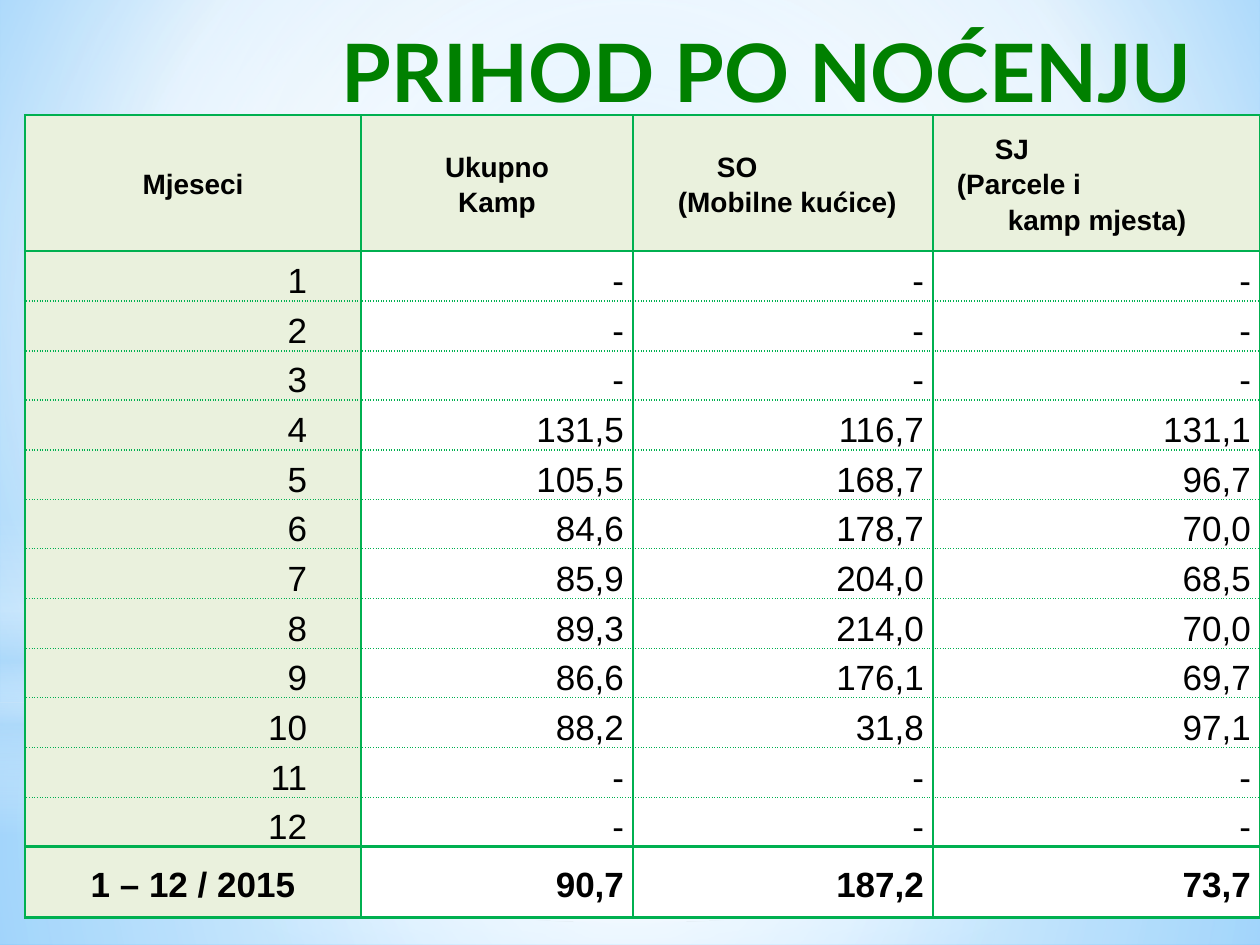
from dataclasses import dataclass

from lxml.etree import SubElement
from pptx import Presentation
from pptx.dml.color import RGBColor
from pptx.enum.shapes import MSO_SHAPE
from pptx.enum.text import MSO_ANCHOR, PP_ALIGN
from pptx.oxml.ns import qn
from pptx.util import Pt

PX = 914400 // 126
SLIDE_WIDTH, SLIDE_HEIGHT = 1260, 945


@dataclass(frozen=True)
class Theme:
    title_font: str = "Lato"
    table_font: str = "Arial"
    title_size: int = 46
    header_size: int = 16
    body_size: int = 20
    title: str = "008000"
    text: str = "000000"
    border: str = "00B050"
    tinted: str = "EAF1DD"
    plain: str = "FFFFFF"
    glow: str = "FFFFFF"
    sky: str = "B4DCFA"
    sky_inner: str = "9ED5FF"
    sky_outer: str = "5BB9FF"


THEME = Theme()
CENTRE = (50, 50, 50, 50)
COLUMN_WIDTHS = (336, 272, 300, 327)
ROW_HEIGHTS = (136, *(50, 50, 49) * 4, 71)
CELL_INSET = 9
MONTH_INSET = 54

# Each header line is its text and its left indent; None means centred.
HEADERS = (
    (("Mjeseci", None),),
    (("Ukupno", None), ("Kamp", None)),
    (("SO", 75), ("(Mobilne kućice)", 36)),
    (("SJ", 53), ("(Parcele i", 15), ("kamp mjesta)", 66)),
)
NO_INCOME = ("-", "-", "-")
MONTHS = (
    NO_INCOME,
    NO_INCOME,
    NO_INCOME,
    ("131,5", "116,7", "131,1"),
    ("105,5", "168,7", "96,7"),
    ("84,6", "178,7", "70,0"),
    ("85,9", "204,0", "68,5"),
    ("89,3", "214,0", "70,0"),
    ("86,6", "176,1", "69,7"),
    ("88,2", "31,8", "97,1"),
    NO_INCOME,
    NO_INCOME,
)
TOTALS = ("1 – 12 / 2015", "90,7", "187,2", "73,7")


def px(length):
    return length * PX


def set_gradient(properties, stops, focus=None, angle=0):
    """Replace a solid fill with (position, colour, opacity) stops in percent."""
    solid = properties.find(qn("a:solidFill"))
    gradient = solid.makeelement(qn("a:gradFill"), {"rotWithShape": "1"})
    properties.replace(solid, gradient)
    stop_list = SubElement(gradient, qn("a:gsLst"))
    for position, colour, opacity in stops:
        stop = SubElement(stop_list, qn("a:gs"), pos=str(position * 1000))
        shade = SubElement(stop, qn("a:srgbClr"), val=colour)
        if opacity < 100:
            SubElement(shade, qn("a:alpha"), val=str(opacity * 1000))
    if focus:
        circle = SubElement(gradient, qn("a:path"), path="circle")
        sides = {side: str(share * 1000) for side, share in zip("ltrb", focus)}
        SubElement(circle, qn("a:fillToRect"), sides)
    else:
        SubElement(gradient, qn("a:lin"), ang=str(angle * 60000), scaled="0")


def paint_background(page):
    page.background.fill.solid()
    properties = page.element.find(".//" + qn("p:bgPr"))
    stops = ((0, THEME.sky_inner, 100), (60, THEME.glow, 100), (100, THEME.sky_outer, 100))
    set_gradient(properties, stops, focus=(20, 10, 20, 60))


def add_glow(page, kind, top, height, stops, **direction):
    shape = page.shapes.add_shape(kind, 0, px(top), px(SLIDE_WIDTH), px(height))
    shape.shadow.inherit = False
    shape.line.fill.background()
    shape.fill.solid()
    set_gradient(shape.element.spPr, stops, **direction)


def add_glows(page):
    white, sky = THEME.glow, THEME.sky
    add_glow(page, MSO_SHAPE.RECTANGLE, 703, 242,
             ((0, white, 91), (37, white, 76), (100, sky, 79)), focus=CENTRE)
    add_glow(page, MSO_SHAPE.RECTANGLE, 0, 703,
             ((0, white, 89), (48, white, 62), (100, sky, 79)), focus=CENTRE)
    add_glow(page, MSO_SHAPE.RECTANGLE, 519, 315,
             ((0, white, 0), (29, white, 30), (45, sky, 40),
              (55, white, 26), (65, sky, 60), (100, white, 0)), angle=90)
    add_glow(page, MSO_SHAPE.OVAL, 220, 703,
             ((0, white, 100), (56, white, 0)), focus=CENTRE)


def style_font(para, name, size, colour, bold):
    font = para.font
    font.name, font.size, font.bold = name, Pt(size), bold
    font.color.rgb = RGBColor.from_string(colour)


def add_title(page, text):
    box = page.shapes.add_textbox(px(54), px(16), px(1150), px(158))
    box.text_frame.word_wrap = True
    para = box.text_frame.paragraphs[0]
    para.text = text
    para.alignment = PP_ALIGN.RIGHT
    style_font(para, THEME.title_font, THEME.title_size, THEME.title, True)


def set_borders(cell, row, column):
    """Solid lines around the blocks, dotted lines between the months."""
    last_row, last_column = len(ROW_HEIGHTS) - 1, len(COLUMN_WIDTHS) - 1
    corner = column in (0, last_column)
    top = 1.5 if row in (1, last_row) or (row == 0 and corner) else 1
    bottom = 1.5 if row in (0, last_row - 1, last_row) else 1
    edges = (
        ("a:lnL", 1.5 if column == 0 else 1, "solid"),
        ("a:lnR", 1.5 if column == last_column else 1, "solid"),
        ("a:lnT", top, "sysDot" if 1 < row < last_row else "solid"),
        ("a:lnB", bottom, "sysDot" if 0 < row < last_row - 1 else "solid"),
    )
    properties = cell._tc.get_or_add_tcPr()
    for index, (tag, width, dash) in enumerate(edges):
        line = properties.makeelement(qn(tag), {"w": str(Pt(width))})
        properties.insert(index, line)
        fill = SubElement(line, qn("a:solidFill"))
        SubElement(fill, qn("a:srgbClr"), val=THEME.border)
        SubElement(line, qn("a:prstDash"), val=dash)


def fill_cell(cell, lines, alignment, size, bold, tinted, anchor, right=CELL_INSET):
    cell.fill.solid()
    cell.fill.fore_color.rgb = RGBColor.from_string(THEME.tinted if tinted else THEME.plain)
    cell.vertical_anchor = anchor
    cell.margin_left, cell.margin_right = px(CELL_INSET), px(right)
    cell.margin_top = cell.margin_bottom = 0
    frame = cell.text_frame
    for index, (text, indent) in enumerate(lines):
        para = frame.add_paragraph() if index else frame.paragraphs[0]
        para.text = text
        para.line_spacing = 1.15
        para.alignment = alignment if indent is None else PP_ALIGN.LEFT
        if indent is not None:
            para._p.get_or_add_pPr().set("marL", str(px(indent)))
        style_font(para, THEME.table_font, size, THEME.text, bold)


def add_income_table(page):
    frame = page.shapes.add_table(len(ROW_HEIGHTS), len(COLUMN_WIDTHS), px(25), px(115),
                                  px(sum(COLUMN_WIDTHS)), px(sum(ROW_HEIGHTS)))
    table = frame.table
    table.first_row = table.horz_banding = False
    for column, width in zip(table.columns, COLUMN_WIDTHS):
        column.width = px(width)
    for row, height in zip(table.rows, ROW_HEIGHTS):
        row.height = px(height)

    for column, lines in enumerate(HEADERS):
        fill_cell(table.cell(0, column), lines, PP_ALIGN.CENTER, THEME.header_size,
                  True, True, MSO_ANCHOR.MIDDLE)
    for month, values in enumerate(MONTHS, start=1):
        for column, text in enumerate((str(month), *values)):
            fill_cell(table.cell(month, column), [(text, None)], PP_ALIGN.RIGHT,
                      THEME.body_size, False, column == 0, MSO_ANCHOR.BOTTOM,
                      CELL_INSET if column else MONTH_INSET)
    for column, text in enumerate(TOTALS):
        fill_cell(table.cell(len(ROW_HEIGHTS) - 1, column), [(text, None)],
                  PP_ALIGN.RIGHT if column else PP_ALIGN.CENTER,
                  THEME.body_size, True, column == 0, MSO_ANCHOR.MIDDLE)
    for row in range(len(ROW_HEIGHTS)):
        for column in range(len(COLUMN_WIDTHS)):
            set_borders(table.cell(row, column), row, column)


def main():
    deck = Presentation()
    deck.slide_width, deck.slide_height = px(SLIDE_WIDTH), px(SLIDE_HEIGHT)
    page = deck.slides.add_slide(deck.slide_layouts[6])
    paint_background(page)
    add_glows(page)
    add_title(page, "PRIHOD PO NOĆENJU")
    add_income_table(page)
    deck.save("out.pptx")


if __name__ == "__main__":
    main()
